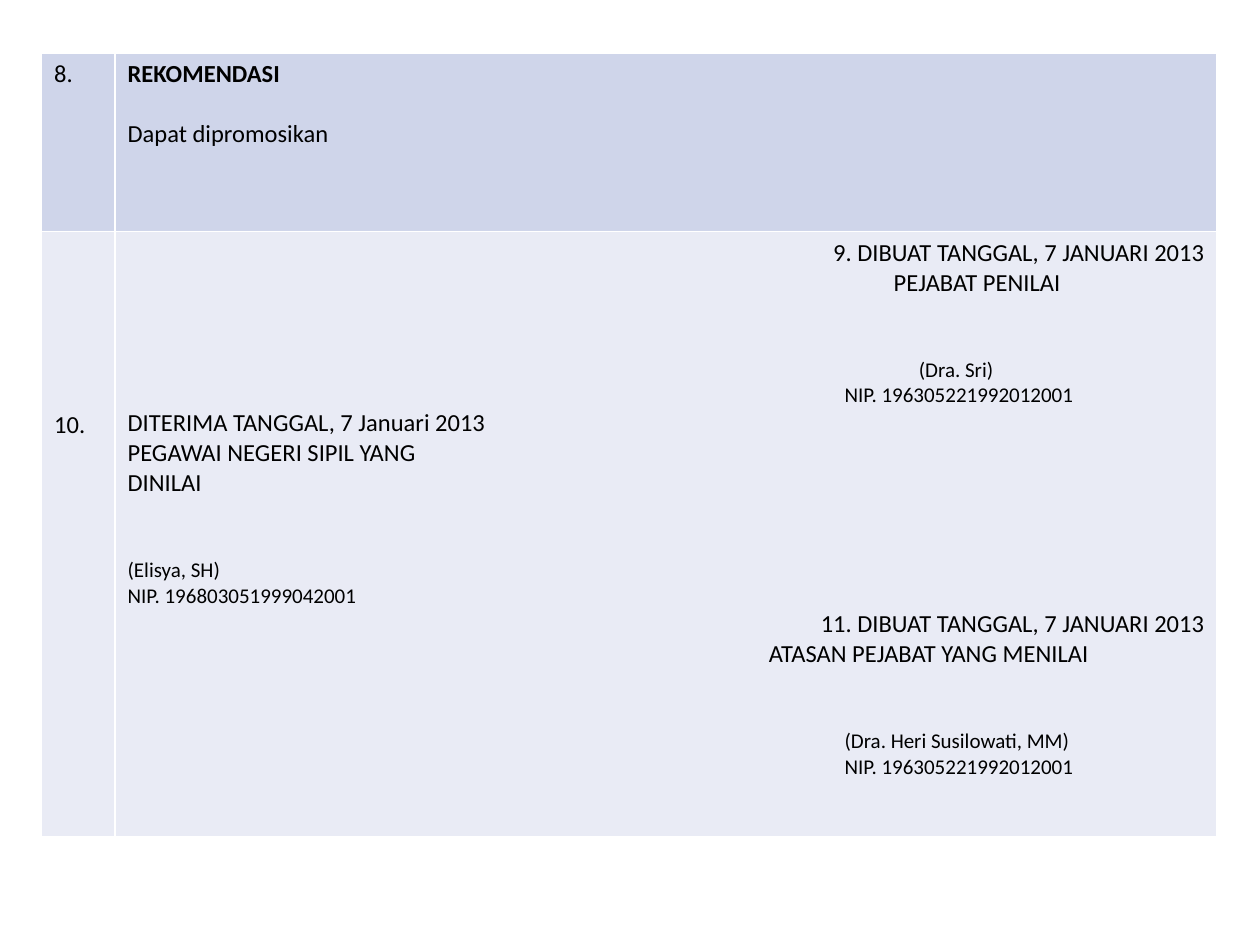
from lxml.etree import SubElement
from pptx import Presentation
from pptx.dml.color import RGBColor
from pptx.enum.text import PP_ALIGN as Align
from pptx.oxml.ns import qn
from pptx.util import Inches, Pt

BLACK = RGBColor(0x00, 0x00, 0x00)
WHITE = RGBColor(0xFF, 0xFF, 0xFF)
BLUE_BAND = RGBColor(0xCF, 0xD5, 0xEA)
PALE_BAND = RGBColor(0xE9, 0xEB, 0xF5)

LINE = 17.1
SIGNATURE_GAP = 2 * LINE
COLUMN_SHARES = (0.0625, 0.9375)
ROW_SHARES = (0.228, 0.772)
ROW_FILLS = (BLUE_BAND, PALE_BAND)
RIGHT = {"alignment": Align.RIGHT}


def signature(name, number, name_indent=0, number_indent=0):
    return [
        (name, {"size": 12, "before": SIGNATURE_GAP, "indent": name_indent}),
        (number, {"size": 12, "indent": number_indent}),
    ]


RECOMMENDATION = [
    ("REKOMENDASI", {"bold": True}),
    ("Dapat dipromosikan", {"before": LINE}),
]
SIGNATORIES = [
    ("9. DIBUAT TANGGAL, 7 JANUARI 2013", RIGHT),
    ("PEJABAT PENILAI", {"indent": 6.08}),
    *signature("(Dra. Sri)", "NIP. 196305221992012001", 6.28, 5.69),
    ("DITERIMA TANGGAL, 7 Januari 2013", {}),
    ("PEGAWAI NEGERI SIPIL YANG", {}),
    ("DINILAI", {}),
    *signature("(Elisya, SH)", "NIP. 196803051999042001"),
    ("11. DIBUAT TANGGAL, 7 JANUARI 2013", RIGHT),
    ("ATASAN PEJABAT YANG MENILAI", {"indent": 5.09}),
    *signature("(Dra. Heri Susilowati, MM)", "NIP. 196305221992012001", 5.69, 5.69),
]
ROWS = [
    [[("8.", {})], RECOMMENDATION],
    [[("10.", {})], SIGNATORIES],
]


def write_paragraph(paragraph, text, size=14, bold=False, before=0, indent=0, alignment=Align.LEFT):
    run = paragraph.add_run()
    run.text = text
    formats = {"name": "Calibri", "size": Pt(size), "bold": bold}
    for attribute, value in formats.items():
        setattr(run.font, attribute, value)
    run.font.color.rgb = BLACK
    paragraph.alignment = alignment
    paragraph.space_before = Pt(before)
    properties = paragraph._p.get_or_add_pPr()
    properties.set("marL", str(Inches(indent)))
    properties.set("indent", "0")


def draw_borders(cell):
    properties = cell._tc.get_or_add_tcPr()
    for position, side in enumerate(("lnL", "lnR", "lnT", "lnB")):
        line = properties.makeelement(qn(f"a:{side}"), {"w": str(Pt(1))})
        fill = SubElement(line, qn("a:solidFill"))
        SubElement(fill, qn("a:srgbClr"), val=str(WHITE))
        properties.insert(position, line)


def fill_cell(cell, content, color, top=0.05):
    cell.fill.solid()
    cell.fill.fore_color.rgb = color
    margins = {"left": 0.1, "right": 0.1, "top": top, "bottom": 0.05}
    for side, margin in margins.items():
        setattr(cell, f"margin_{side}", Inches(margin))
    draw_borders(cell)
    frame = cell.text_frame
    for index, (text, formats) in enumerate(content):
        paragraph = frame.add_paragraph() if index else frame.paragraphs[0]
        write_paragraph(paragraph, text, **formats)


def add_assessment_table(slide, left, top, width, height):
    table = slide.shapes.add_table(2, 2, left, top, width, height).table
    table.first_row = False
    table.horz_banding = False
    for column, share in zip(table.columns, COLUMN_SHARES):
        column.width = int(width * share)
    for row, share in zip(table.rows, ROW_SHARES):
        row.height = int(height * share)
    for row_index, (contents, color) in enumerate(zip(ROWS, ROW_FILLS)):
        for column_index, content in enumerate(contents):
            top_margin = 1.42 if (row_index, column_index) == (1, 0) else 0.05
            fill_cell(table.cell(row_index, column_index), content, color, top_margin)


def main():
    presentation = Presentation()
    presentation.slide_width = Inches(10)
    presentation.slide_height = Inches(7.5)
    slide = presentation.slides.add_slide(presentation.slide_layouts[6])
    add_assessment_table(slide, Inches(0.33), Inches(0.42), Inches(9.33), Inches(6.22))
    presentation.save("out.pptx")


if __name__ == "__main__":
    main()
